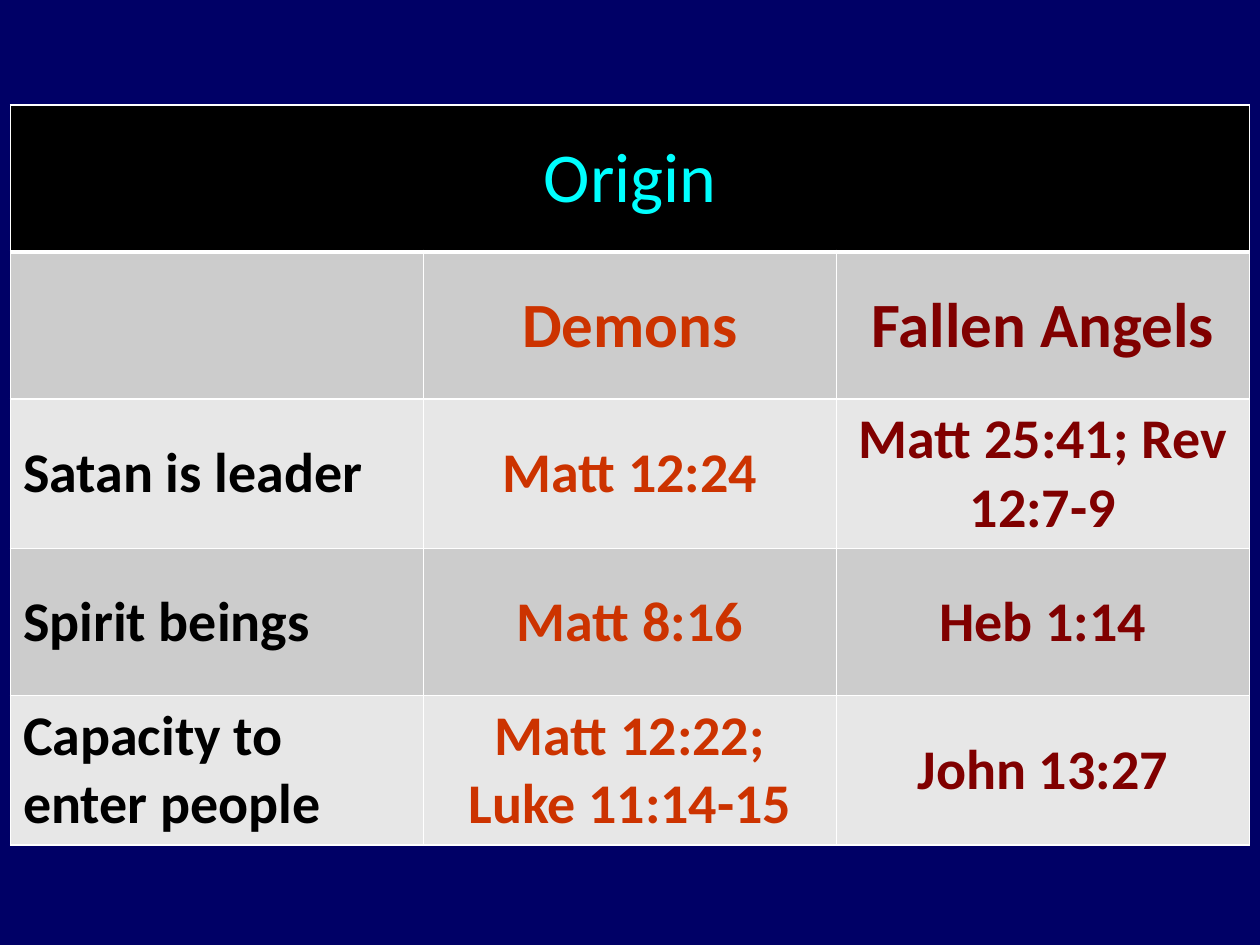
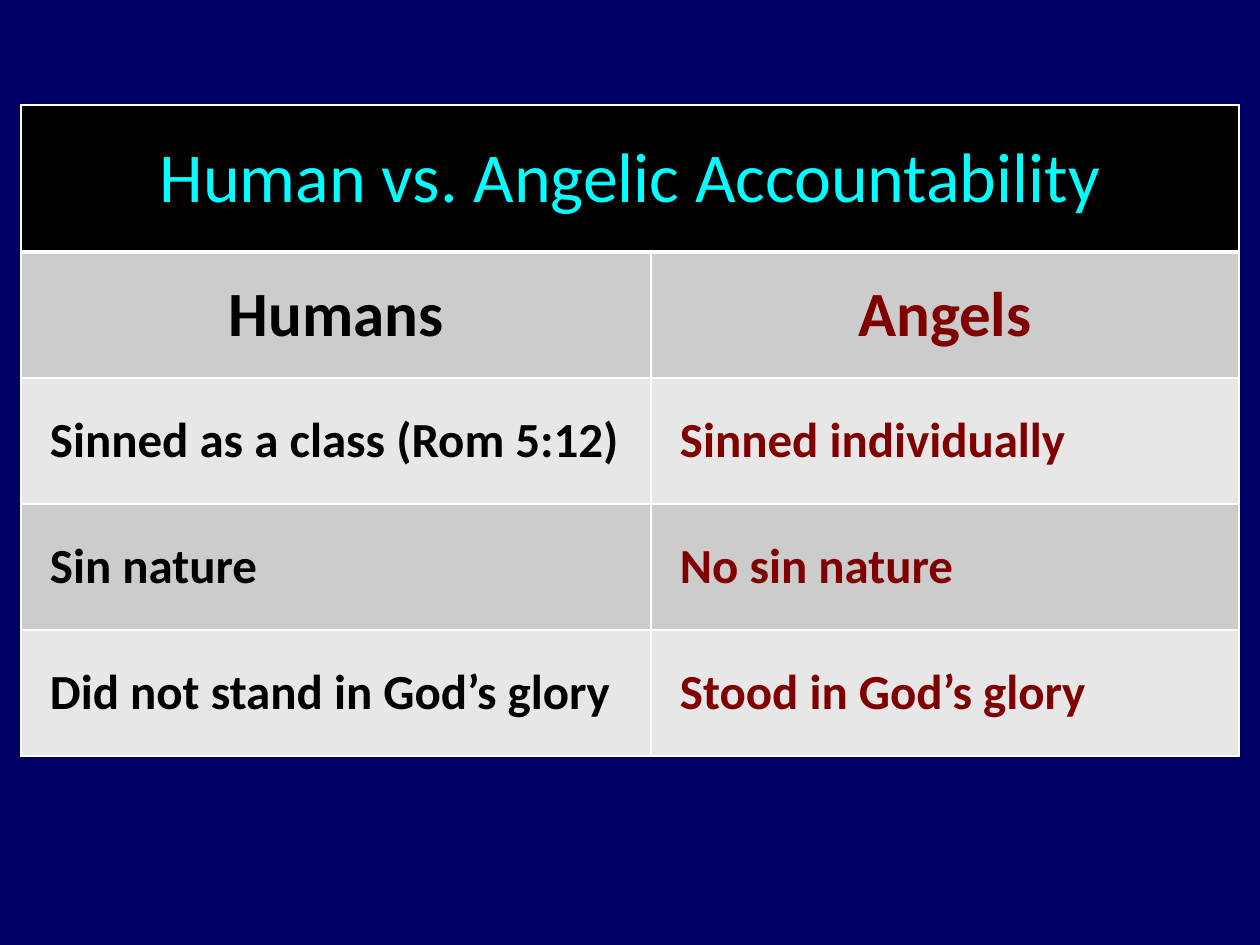
from dataclasses import dataclass

from lxml.etree import SubElement
from pptx import Presentation
from pptx.dml.color import RGBColor
from pptx.enum.text import MSO_ANCHOR as Anchor, PP_ALIGN as Align
from pptx.oxml.ns import qn
from pptx.util import Inches, Pt

TABLES = [
    {
        "title": "Origin",
        "headings": ["", "Demons", "Fallen Angels"],
        "rows": [
            ["Satan is leader", "Matt 12:24", "Matt 25:41; Rev 12:7-9"],
            ["Spirit beings", "Matt 8:16", "Heb 1:14"],
            ["Capacity to enter people", "Matt 12:22; Luke 11:14-15", "John 13:27"],
        ],
        "colors": ["black", "orange", "maroon"],
        "alignments": [Align.LEFT, Align.CENTER, Align.CENTER],
        "body_size": 32,
        "indent": 0,
        "column_units": [118 / 3] * 3,
        "row_units": [14] * 5,
    },
    {
        "title": "Human vs. Angelic Accountability",
        "headings": ["Humans", "Angels"],
        "rows": [
            ["Sinned as a class (Rom 5:12)", "Sinned individually"],
            ["Sin nature", "No sin nature"],
            ["Did not stand in God’s glory", "Stood in God’s glory"],
        ],
        "colors": ["black", "maroon"],
        "alignments": [Align.JUSTIFY] * 2,
        "body_size": 28,
        "indent": 0.13,
        "column_units": [60, 56],
        "row_units": [14] + [12] * 4,
    },
]


@dataclass(frozen=True)
class Theme:
    font: str = "Calibri"
    background: str = "000066"
    border: str = "FFFFFF"
    black: str = "000000"
    cyan: str = "00FFFF"
    orange: str = "CC3300"
    maroon: str = "800000"
    bands: tuple = ("CCCCCC", "E7E7E7")
    title_size: int = 40
    heading_size: int = 36
    thin: int = 1
    thick: int = 3


THEME = Theme()
SLIDE_UNITS = 120
TOP_UNITS = 10


def grid(units):
    return Inches(units / 12)


def fill_solid(fill, color):
    fill.solid()
    fill.fore_color.rgb = RGBColor.from_string(color)


def write_text(cell, text, *, size, color, bold=True, align=Align.CENTER, indent=0):
    cell.vertical_anchor = Anchor.MIDDLE
    if not text:
        return
    paragraph = cell.text_frame.paragraphs[0]
    paragraph.alignment = align
    if indent:
        properties = paragraph._p.get_or_add_pPr()
        properties.set("marL", str(Inches(indent)))
        properties.set("indent", "0")
    run = paragraph.add_run()
    run.text = text
    run.font.name = THEME.font
    run.font.size = Pt(size)
    run.font.bold = bold
    run.font.color.rgb = RGBColor.from_string(color)


def style_cell(cell, row):
    widths = {"L": THEME.thin, "R": THEME.thin,
              "T": THEME.thick if row == 1 else THEME.thin,
              "B": THEME.thick if row == 0 else THEME.thin}
    properties = cell._tc.get_or_add_tcPr()
    for side, width in widths.items():
        line = SubElement(properties, qn(f"a:ln{side}"), w=str(Pt(width)))
        solid = SubElement(line, qn("a:solidFill"))
        SubElement(solid, qn("a:srgbClr"), val=THEME.border)
    fill_solid(cell.fill, THEME.bands[(row - 1) % 2] if row else THEME.black)


def add_comparison(slide, content):
    columns, rows = content["column_units"], content["row_units"]
    width = sum(columns)
    frame = slide.shapes.add_table(
        len(rows), len(columns), grid((SLIDE_UNITS - width) / 2),
        grid(TOP_UNITS), grid(width), grid(sum(rows)))
    table = frame.table
    for column, units in zip(table.columns, columns):
        column.width = grid(units)
    for row, units in zip(table.rows, rows):
        row.height = grid(units)
        
    for row in range(len(rows)):
        for column in range(len(columns)):
            style_cell(table.cell(row, column), row)

    title = table.cell(0, 0)
    title.merge(table.cell(0, len(columns) - 1))
    write_text(title, content["title"], size=THEME.title_size,
               color=THEME.cyan, bold=False)

    for column, name in enumerate(content["colors"]):
        color = getattr(THEME, name)
        write_text(table.cell(1, column), content["headings"][column],
                   size=THEME.heading_size, color=color)
        for row, texts in enumerate(content["rows"], start=2):
            write_text(table.cell(row, column), texts[column],
                       size=content["body_size"], color=color,
                       align=content["alignments"][column],
                       indent=content["indent"])


def main():
    presentation = Presentation()
    presentation.slide_width = Inches(10)
    presentation.slide_height = Inches(7.5)
    for content in TABLES:
        slide = presentation.slides.add_slide(presentation.slide_layouts[6])
        fill_solid(slide.background.fill, THEME.background)
        add_comparison(slide, content)
    presentation.save("out.pptx")


if __name__ == "__main__":
    main()
